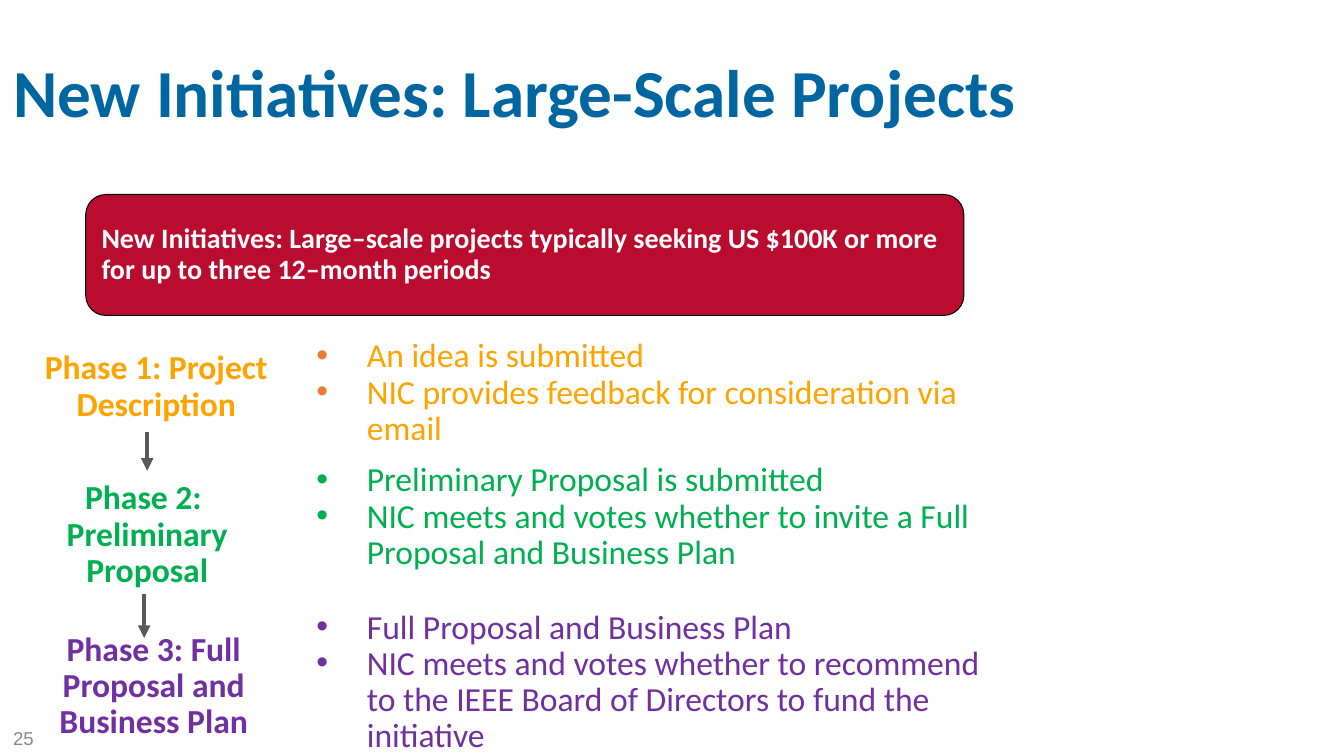
from lxml import etree
from pptx import Presentation, util as u
from pptx.dml.color import RGBColor
from pptx.enum import shapes, text
from pptx.oxml import ns

COLOURS = {
    "title": "0066A1", "banner": "BA0C2F", "border": "000000", "white": "FFFFFF",
    "arrow": "595959", "number": "898989", "orange": "FFA300",
    "orange_bullet": "ED7D31", "green": "00B050", "purple": "7030A0",
}
ANCHOR = text.MSO_ANCHOR

# label lines, label box, points, points box, text colour, bullet colour
PHASES = [
    (["Phase 1: Project Description"], (0.14, 3.39, 2.82, 0.86),
     ["An idea is submitted",
      "NIC provides feedback for consideration via email"],
     (3.04, 3.13, 6.79, 1.36), "orange", "orange_bullet"),
    (["Phase 2: ", "Preliminary Proposal"], (0.15, 5.45, 2.62, 0.45),
     ["Preliminary Proposal is submitted",
      "NIC meets and votes whether to invite a Full Proposal and Business Plan"],
     (3.04, 4.62, 6.79, 1.1), "green", "green"),
    (["Phase 3: Full Proposal and Business Plan"], (0.18, 6.81, 2.69, 0.59),
     ["Full Proposal and Business Plan",
      "NIC meets and votes whether to recommend to the IEEE Board of Directors "
      "to fund the initiative"],
     (3.04, 6.25, 6.79, 1.29), "purple", "purple"),
]
PHASE_ARROWS = [(1.46, 4.29, 4.67), (1.43, 5.89, 6.33)]  # x, top, bottom


def rgb(name):
    return RGBColor.from_string(COLOURS[name])


def add_bullet(paragraph, colour):
    """Give the paragraph a round bullet with a half-inch hanging indent."""
    props = paragraph._p.get_or_add_pPr()
    props.set("marL", str(u.Inches(0.5)))
    props.set("indent", str(-u.Inches(0.5)))
    bullet_colour = etree.SubElement(props, ns.qn("a:buClr"))
    etree.SubElement(bullet_colour, ns.qn("a:srgbClr"), val=COLOURS[colour])
    etree.SubElement(props, ns.qn("a:buFont"), typeface="Arial")
    etree.SubElement(props, ns.qn("a:buChar"), char="•")


def write(frame, lines, size=24, colour="white", bold=False, font="Calibri",
          align=text.PP_ALIGN.LEFT, anchor=ANCHOR.BOTTOM, spacing=0.9,
          bullet=None, insets=(0.1, 0.05)):
    frame.word_wrap = True
    frame.auto_size = text.MSO_AUTO_SIZE.NONE
    frame.vertical_anchor = anchor
    frame.margin_left = frame.margin_right = u.Inches(insets[0])
    frame.margin_top = frame.margin_bottom = u.Inches(insets[1])
    for index, line in enumerate(lines):
        paragraph = frame.add_paragraph() if index else frame.paragraphs[0]
        if bullet:
            add_bullet(paragraph, bullet)
        paragraph.alignment = align
        paragraph.line_spacing = spacing
        paragraph.space_before = u.Pt(0)
        run = paragraph.add_run()
        run.text = line
        run.font.name = font
        run.font.size = u.Pt(size)
        run.font.bold = bold
        run.font.color.rgb = rgb(colour)


class SlideBuilder:
    WIDE_INSETS = (0.13, 0.07)

    def __init__(self, deck):
        self.slide = deck.slides.add_slide(deck.slide_layouts[5])

    def title(self, line, box):
        heading = self.slide.shapes.title
        heading.left, heading.top, heading.width, heading.height = map(u.Inches, box)
        write(heading.text_frame, [line], size=48, colour="title", bold=True,
              anchor=ANCHOR.TOP, insets=self.WIDE_INSETS)

    def text_box(self, lines, box, **style):
        area = self.slide.shapes.add_textbox(*map(u.Inches, box))
        write(area.text_frame, lines, **style)

    def banner(self, line, box):
        panel = self.slide.shapes.add_shape(
            shapes.MSO_SHAPE.ROUNDED_RECTANGLE, *map(u.Inches, box))
        panel.shadow.inherit = False
        panel.fill.solid()
        panel.fill.fore_color.rgb = rgb("banner")
        panel.line.color.rgb = rgb("border")
        panel.line.width = u.Pt(0)
        write(panel.text_frame, [line], size=20, bold=True, anchor=ANCHOR.MIDDLE)

    def down_arrow(self, x, top, bottom):
        arrow = self.slide.shapes.add_connector(
            shapes.MSO_CONNECTOR.STRAIGHT, *map(u.Inches, (x, top, x, bottom)))
        arrow.line.color.rgb = rgb("arrow")
        arrow.line.width = u.Pt(3)
        etree.SubElement(arrow.line._get_or_add_ln(), ns.qn("a:tailEnd"), type="triangle")
        etree.SubElement(arrow._element.spPr, ns.qn("a:effectLst"))


def main():
    deck = Presentation()
    deck.slide_width, deck.slide_height = u.Inches(13.33), u.Inches(7.5)
    page = SlideBuilder(deck)
    page.title("New Initiatives: Large-Scale Projects", (0, 0.52, 11.33, 1.25))
    for label, label_box, points, points_box, colour, bullet in PHASES:
        page.text_box(label, label_box, colour=colour, bold=True,
                      align=text.PP_ALIGN.CENTER)
        page.text_box(points, points_box, colour=colour, bullet=bullet)
    for x, top, bottom in PHASE_ARROWS:
        page.down_arrow(x, top, bottom)
    page.banner("New Initiatives: Large–scale projects typically seeking US $100K "
                "or more for up to three 12–month periods", (0.85, 1.93, 8.71, 1.2))
    page.text_box(["25"], (0, 7.12, 1, 0.4), size=13.3, colour="number", font="Arial",
                  anchor=ANCHOR.MIDDLE, spacing=1.0, insets=page.WIDE_INSETS)
    deck.save("out.pptx")


if __name__ == "__main__":
    main()
